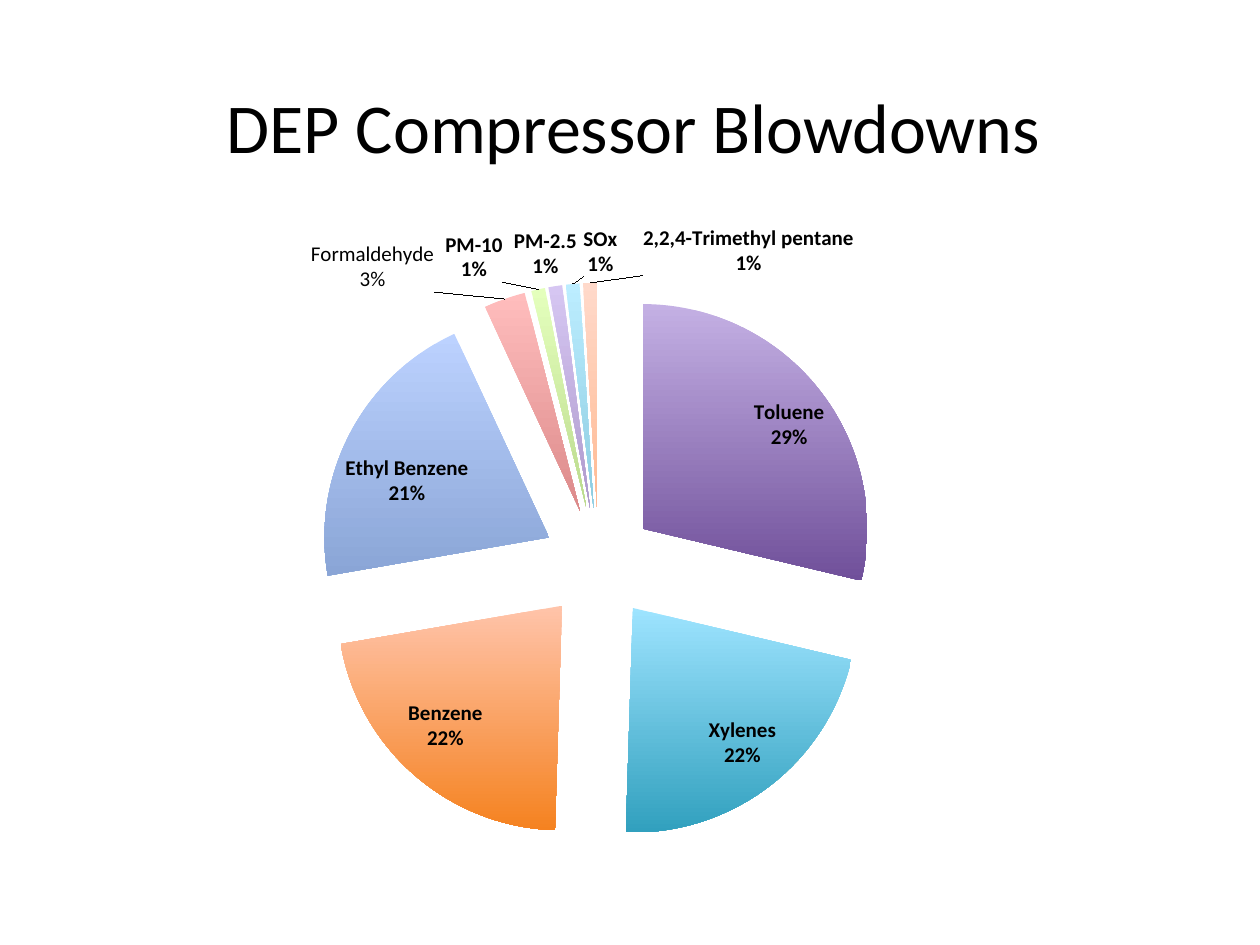
from lxml import etree
from pptx import Presentation
from pptx.chart.data import CategoryChartData
from pptx.dml.color import RGBColor
from pptx.enum.chart import XL_CHART_TYPE, XL_LABEL_POSITION
from pptx.enum.text import MSO_ANCHOR, PP_ALIGN
from pptx.oxml import parse_xml
from pptx.oxml.ns import nsdecls, qn
from pptx.util import Pt

INSIDE = XL_LABEL_POSITION.INSIDE_END
OUTSIDE = XL_LABEL_POSITION.OUTSIDE_END
FONT = "Calibri"
BLACK = "000000"

TITLE = "DEP Compressor Blowdowns"
TITLE_BOX = (26, 19, 672, 106)
CHART_BOX = (36, 126, 648, 356.4)
PLOT_AREA = {"x": 0.225, "y": 0.1, "w": 0.495, "h": 0.9}
EXPLOSION = 25

EMPTY_ROWS = 3  # unnamed rows without values ahead of the slices

# name, value, top colour, bottom colour, label position, label offset
SLICES = [
    ("Toluene", 29, "C4B0E4", "70509A", INSIDE, (0.01, 0.01)),
    ("Xylenes", 22, "9EE4FF", "31A0BE", INSIDE, (0.01, -0.02)),
    ("Benzene", 22, "FFC4AA", "F58220", INSIDE, (-0.01, -0.03)),
    ("Ethyl Benzene", 21, "BCD2FF", "8AA5D6", INSIDE, (-0.01, 0.03)),
    ("Formal dehyde", 3, "FFBDBD", "DC8A8A", OUTSIDE, (-0.06, 0)),
    ("PM-10", 1, "E4FFBC", "BBDA8E", OUTSIDE, (-0.03, 0)),
    ("PM-2.5", 1, "D6C6F2", "AE9ACC", OUTSIDE, (0.02, 0)),
    ("SOx", 1, "BCEDFF", "8CCCE0", OUTSIDE, (0.04, 0)),
    ("2,2,4-Trimethyl pentane", 1, "FFD9CA", "FFBA92", OUTSIDE, (0.14, 0)),
]
CUSTOM_LABELS = {"Formal dehyde": ("Formaldehyde", "3%")}


def color(hex_string):
    return RGBColor.from_string(hex_string)


def format_font(font, size, bold=False):
    font.name = FONT
    font.size = Pt(size)
    font.bold = bold
    font.color.rgb = color(BLACK)


def add_text(slide, text, box, size, bold=False, align=PP_ALIGN.CENTER):
    frame = slide.shapes.add_textbox(*map(Pt, box)).text_frame
    frame.word_wrap = True
    frame.vertical_anchor = MSO_ANCHOR.MIDDLE
    paragraph = frame.paragraphs[0]
    paragraph.alignment = align
    run = paragraph.add_run()
    run.text = text
    format_font(run.font, size, bold)


def manual_layout(values, inner=False):
    target = '<c:layoutTarget val="inner"/>' if inner else ""
    modes = '<c:xMode val="edge"/><c:yMode val="edge"/>' if inner else ""
    sizes = "".join(f'<c:{key} val="{value}"/>' for key, value in values.items())
    return parse_xml(
        f'<c:layout {nsdecls("c")}><c:manualLayout>{target}{modes}{sizes}'
        "</c:manualLayout></c:layout>"
    )


def format_point(point, name, top, bottom, position):
    fill = point.format.fill
    fill.gradient()
    fill.gradient_angle = 270
    for stop, shade in zip(fill.gradient_stops, (top, bottom)):
        stop.color.rgb = color(shade)
    point.format.line.fill.background()

    label = point.data_label
    if name in CUSTOM_LABELS:
        frame = label.text_frame
        for number, line in enumerate(CUSTOM_LABELS[name]):
            paragraph = frame.add_paragraph() if number else frame.paragraphs[0]
            run = paragraph.add_run()
            run.text = line
            format_font(run.font, 12)
    else:
        format_font(label.font, 12, bold=True)
    label.position = position


def finish_label(label, offset):
    """Show category and percent on two lines, moved by the offset."""
    for name, shown in (("showVal", 0), ("showCatName", 1), ("showPercent", 1)):
        label.find(qn(f"c:{name}")).set("val", str(shown))
    etree.SubElement(label, qn("c:separator")).text = "\n"
    label.insert(1, manual_layout(dict(zip("xy", offset))))


def add_pie(slide):
    data = CategoryChartData()
    data.categories = [""] * EMPTY_ROWS + [entry[0] for entry in SLICES]
    values = [None] * EMPTY_ROWS + [entry[1] for entry in SLICES]
    data.add_series("Series 1", values)
    chart = slide.shapes.add_chart(
        XL_CHART_TYPE.PIE, *map(Pt, CHART_BOX), data
    ).chart
    chart.has_title = False
    chart.has_legend = False
    format_font(chart.font, 10)
    plot = chart.plots[0]
    plot.vary_by_categories = True
    series = plot.series[0]

    labels = series.data_labels
    labels.show_value = False
    labels.show_percentage = False
    format_font(labels.font, 12, bold=True)
    for index, entry in enumerate(SLICES, EMPTY_ROWS):
        format_point(series.points[index], *entry[:1], *entry[2:5])
    point_labels = list(series._element.iter(qn("c:dLbl")))
    for label, entry in zip(point_labels, SLICES):
        finish_label(label, entry[5])

    explosion = parse_xml(f'<c:explosion {nsdecls("c")} val="{EXPLOSION}"/>')
    series._element.find(qn("c:dPt")).addprevious(explosion)

    plot_area = plot._element.getparent()
    for layout in plot_area.findall(qn("c:layout")):
        plot_area.remove(layout)
    plot_area.insert(0, manual_layout(PLOT_AREA, inner=True))


def main():
    presentation = Presentation()
    presentation.slide_width = Pt(720)
    presentation.slide_height = Pt(540)
    slide = presentation.slides.add_slide(presentation.slide_layouts[6])
    add_text(slide, TITLE, TITLE_BOX, size=40)
    add_pie(slide)
    presentation.save("out.pptx")


if __name__ == "__main__":
    main()
